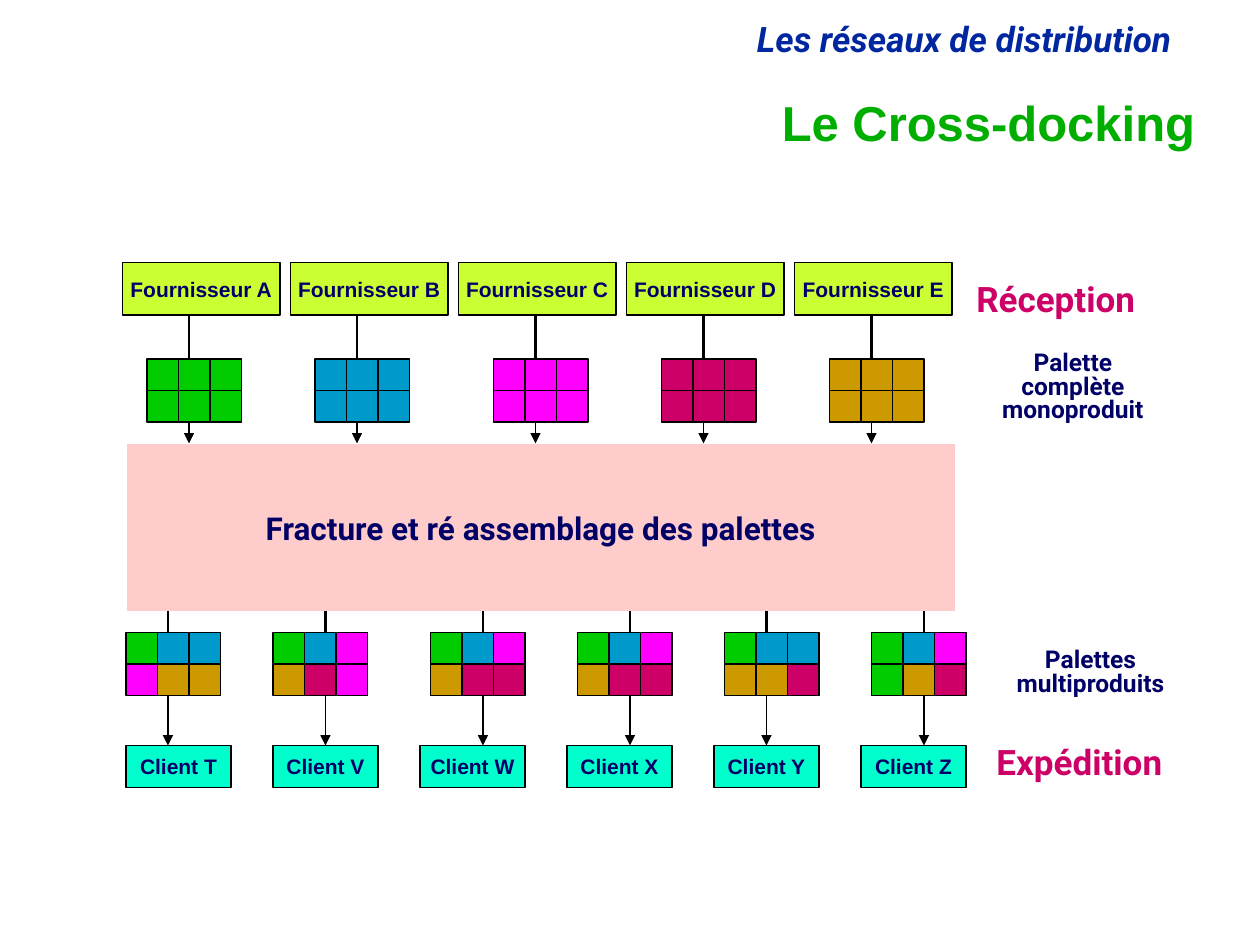
"""Build the cross-docking slide: suppliers, pallets, hub and clients."""
import pptx
import pptx.util
import pptx.dml.color
import pptx.enum.shapes
import pptx.enum.text
import pptx.oxml
import pptx.oxml.ns

Pt = pptx.util.Pt
ALIGN = pptx.enum.text.PP_ALIGN
ANCHOR = pptx.enum.text.MSO_ANCHOR

COLORS = {
    "black": "000000", "white": "FFFFFF", "navy": "000066", "blue": "00279F",
    "title": "00AE00", "supplier": "CCFF33", "client": "00FFCC", "hub": "FFCCCC",
    "G": "00CC00", "B": "0099CC", "M": "FF00FF", "R": "CC0066", "O": "CC9900",
}

SUPPLIERS = [
    ("Fournisseur A", 84, "GGGGGG"),
    ("Fournisseur B", 180, "BBBBBB"),
    ("Fournisseur C", 282, "MMMMMM"),
    ("Fournisseur D", 378, "RRRRRR"),
    ("Fournisseur E", 474, "OOOOOO"),
]
CLIENTS = [
    ("Client T", 72, 96, "GBBMOO"),
    ("Client V", 156, 186, "GBMORM"),
    ("Client W", 246, 276, "GBMORR"),
    ("Client X", 330, 360, "GBMORR"),
    ("Client Y", 414, 438, "GBBOOR"),
    ("Client Z", 498, 528, "GBMGOR"),
]
HUB = "Fracture et ré assemblage des palettes"
LABELS = [
    ("Les réseaux de distribution", (425.5, 9.4, 292.3, 28.8), 20, "blue", ALIGN.LEFT, 0.9, True),
    ("Réception", (550.8, 154.8, 115.2, 31), 20, "R", ALIGN.LEFT, 1, False),
    ("Expédition", (562.3, 419.8, 121.7, 31), 20, "R", ALIGN.LEFT, 1, False),
    ("Palette\vcomplète\vmonoproduit", (560.2, 198, 105.8, 47.5), 14, "navy", ALIGN.CENTER, 0.8, False),
    ("Palettes\nmultiproduits", (568.1, 367.9, 110.2, 33.8), 14, "navy", ALIGN.CENTER, 0.8, False),
]
TITLE = "Le Cross-docking"

CELL = 18
SUPPLIER_LEFT, SUPPLIER_STEP, SUPPLIER_TOP = 70, 96, 150
SUPPLIER_SIZE = (90, 30)
CLIENT_LEFT, CLIENT_STEP, CLIENT_TOP = 72, 84, 426
CLIENT_SIZE = (60, 24)
INBOUND_TOP, OUTBOUND_TOP = 205.2, 361.4
HUB_BOX = (72, 253.4, 474, 96)

deck = pptx.Presentation()
deck.slide_width, deck.slide_height = Pt(720), Pt(540)
slide = deck.slides.add_slide(deck.slide_layouts[6])


def color(name):
    return pptx.dml.color.RGBColor.from_string(COLORS[name])


def write(frame, text, size, tint, font="Roboto", align=ALIGN.CENTER, spacing=None, italic=False):
    frame.text = text
    for paragraph in frame.paragraphs:
        paragraph.alignment = align
        paragraph.line_spacing = spacing
        for run in paragraph.runs:
            run.font.name, run.font.size = font, Pt(size)
            run.font.bold, run.font.italic = True, italic
            run.font.color.rgb = color(tint)


def box(bounds, fill, outline="black", shapes=slide.shapes):
    rect = shapes.add_shape(pptx.enum.shapes.MSO_SHAPE.RECTANGLE, *map(Pt, bounds))
    rect.shadow.inherit = False
    rect.fill.solid()
    rect.fill.fore_color.rgb = color(fill)
    rect.line.color.rgb = color(outline)
    rect.line.width = Pt(1)
    return rect


def caption_box(bounds, fill, text, size, font, outline="black"):
    frame = box(bounds, fill, outline).text_frame
    frame.word_wrap = False
    frame.vertical_anchor = ANCHOR.MIDDLE
    write(frame, text, size, "navy", font)


def pallet(left, top, goods):
    group = slide.shapes.add_group_shape()
    for i, good in enumerate(goods):
        row, column = divmod(i, 3)
        box((left + column * CELL, top + row * CELL, CELL, CELL), good, shapes=group.shapes)


def flow(x, start, end, arrow=False):
    line = slide.shapes.add_connector(
        pptx.enum.shapes.MSO_CONNECTOR.STRAIGHT, Pt(x), Pt(start), Pt(x), Pt(end))
    line.line.color.rgb = color("black")
    line.line.width = Pt(1 if arrow else 1.5)
    if arrow:
        tail = pptx.oxml.parse_xml(
            f'<a:tailEnd {pptx.oxml.ns.nsdecls("a")} type="triangle"/>')
        line.line._get_or_add_ln().append(tail)
    line._element.spPr.append(
        pptx.oxml.parse_xml(f'<a:effectLst {pptx.oxml.ns.nsdecls("a")}/>'))


hub_top, hub_bottom = HUB_BOX[1], HUB_BOX[1] + HUB_BOX[3]
caption_box(HUB_BOX, "hub", HUB, 18, "Roboto", "white")

for i, (name, pallet_left, goods) in enumerate(SUPPLIERS):
    left = SUPPLIER_LEFT + i * SUPPLIER_STEP
    caption_box((left, SUPPLIER_TOP, *SUPPLIER_SIZE), "supplier", name, 12, "Arial")
    pallet(pallet_left, INBOUND_TOP, goods)
    axis = pallet_left + 24
    flow(axis, SUPPLIER_TOP + SUPPLIER_SIZE[1], INBOUND_TOP)
    flow(axis, INBOUND_TOP + 2 * CELL, hub_top, arrow=True)

for i, (name, pallet_left, axis, goods) in enumerate(CLIENTS):
    left = CLIENT_LEFT + i * CLIENT_STEP
    caption_box((left, CLIENT_TOP, *CLIENT_SIZE), "client", name, 12, "Arial")
    pallet(pallet_left, OUTBOUND_TOP, goods)
    flow(axis, hub_bottom, OUTBOUND_TOP)
    flow(axis, OUTBOUND_TOP + 2 * CELL, CLIENT_TOP, arrow=True)

for text, bounds, size, tint, align, spacing, italic in LABELS:
    frame = slide.shapes.add_textbox(*map(Pt, bounds)).text_frame
    frame.word_wrap = italic
    frame.auto_size = pptx.enum.text.MSO_AUTO_SIZE.SHAPE_TO_FIT_TEXT
    write(frame, text, size, tint, align=align, spacing=spacing, italic=italic)

heading = slide.shapes.add_textbox(Pt(120), Pt(54), Pt(570), Pt(36)).text_frame
heading.word_wrap = True
heading.vertical_anchor = ANCHOR.MIDDLE
write(heading, TITLE, 28, "title", "Arial", ALIGN.RIGHT, 0.9)

deck.save("out.pptx")
